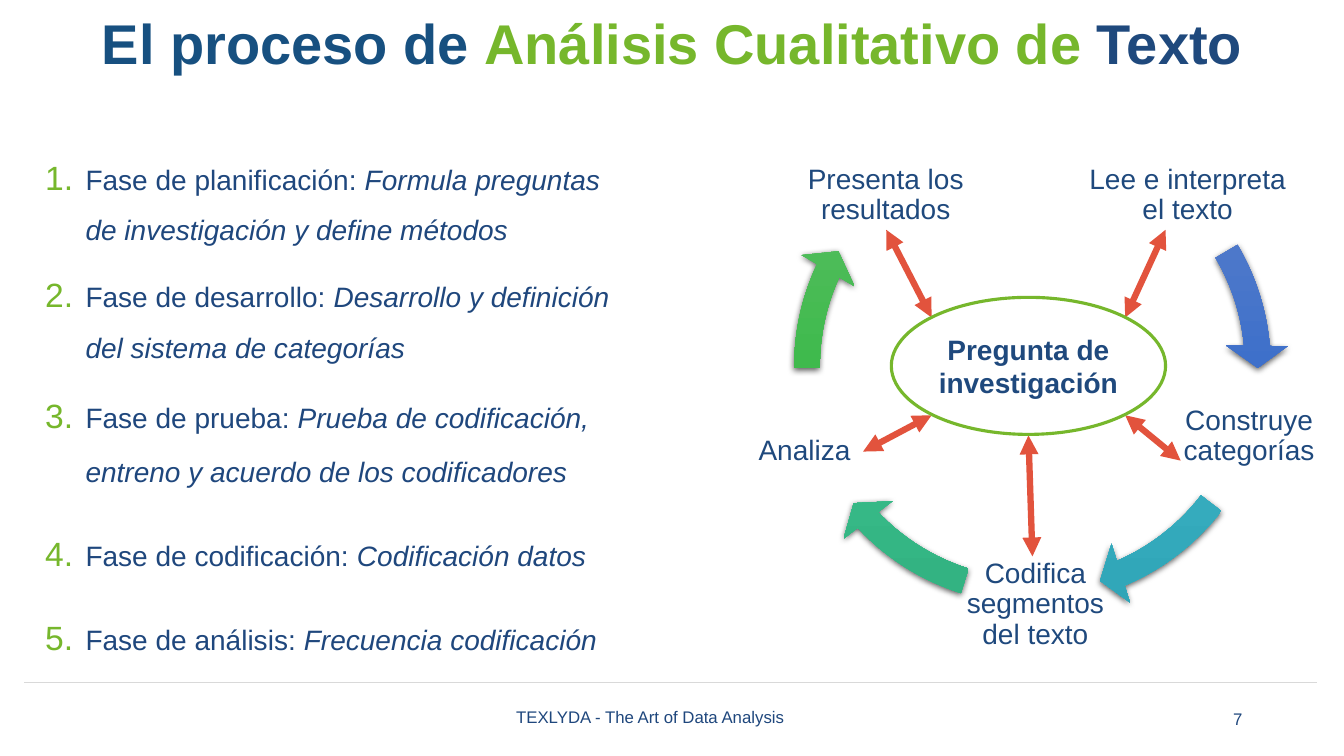
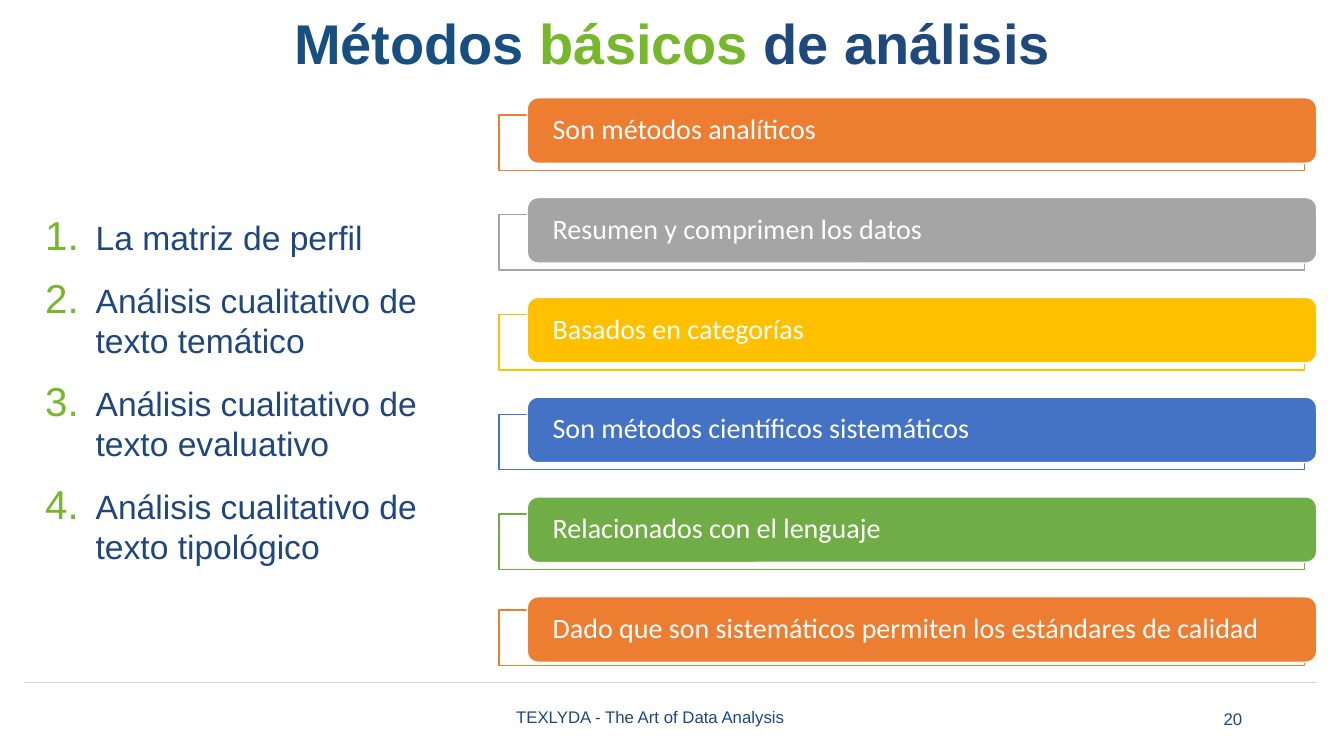
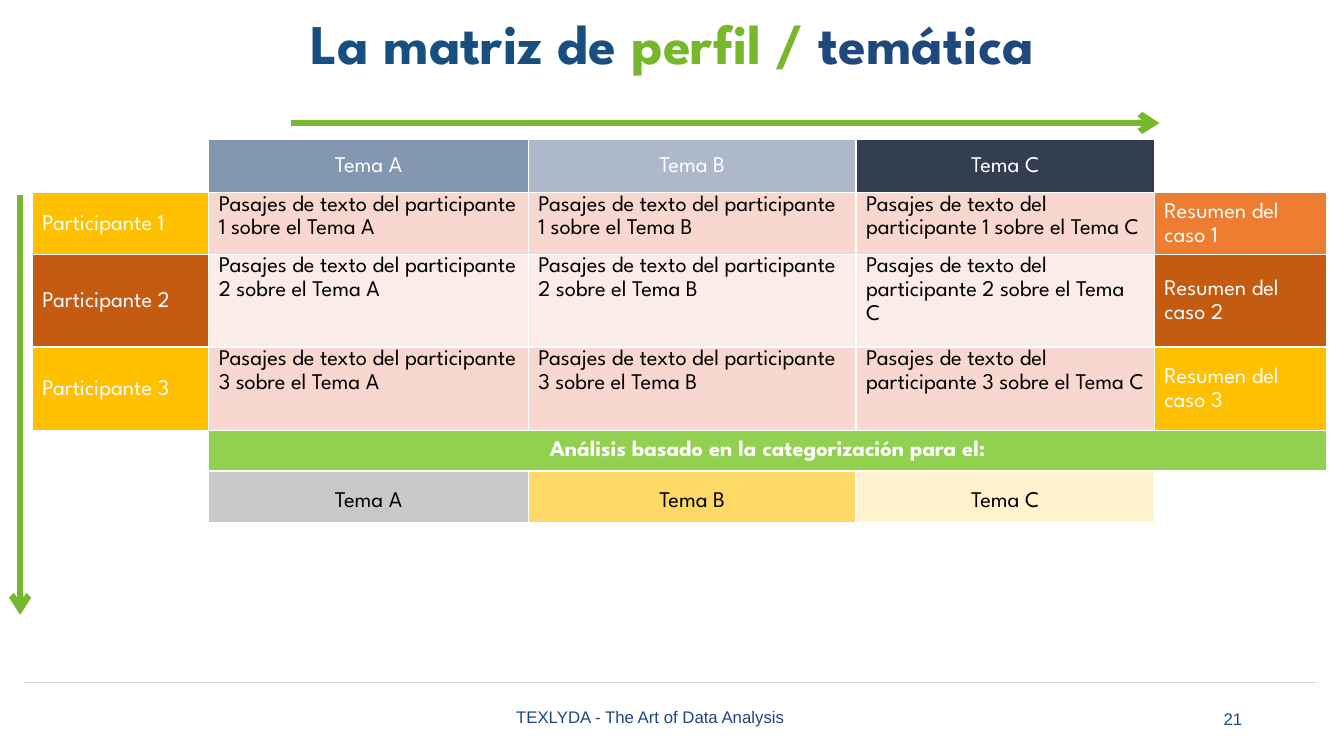
from copy import deepcopy

from pptx import Presentation
from pptx.dml.color import RGBColor
from pptx.enum.shapes import MSO_CONNECTOR, MSO_SHAPE
from pptx.enum.text import MSO_ANCHOR, PP_ALIGN
from pptx.oxml import parse_xml
from pptx.oxml.ns import nsdecls, qn
from pptx.util import Inches, Pt

LEFT, CENTER, RIGHT = PP_ALIGN.LEFT, PP_ALIGN.CENTER, PP_ALIGN.RIGHT
TOP, MIDDLE = MSO_ANCHOR.TOP, MSO_ANCHOR.MIDDLE
STRAIGHT = MSO_CONNECTOR.STRAIGHT
RECT, ROUND = MSO_SHAPE.RECTANGLE, MSO_SHAPE.ROUNDED_RECTANGLE
OVAL, SWEEP = MSO_SHAPE.OVAL, MSO_SHAPE.CIRCULAR_ARROW
ARIAL, SPARTAN, CALIBRI = "Arial", "League Spartan", "Calibri"

COLORS = {
    "white": "FFFFFF", "black": "000000", "rule": "D9D9D9",
    "text": "1F477D", "navy": "1F497D", "teal": "175080",
    "green": "76B72C", "red": "E2533D",
    "orange": "ED7D31", "rust": "C55A11", "gold": "FFC000",
    "gray": "A5A5A5", "blue": "4472C4", "leaf": "70AD47",
    "steel": "8497B0", "mist": "ADB9CA", "slate": "333F50",
    "pink": "F8D7CE", "blush": "FCECE8", "lime": "92D050",
    "silver": "C9C9C9", "sand": "FFD966", "cream": "FFF2CC",
}
RGB = {name: RGBColor.from_string(code) for name, code in COLORS.items()}


def write(frame, runs, size, font=ARIAL, align=LEFT, space=1.0):
    """Add one paragraph of (text, colour, style) runs to a text frame."""
    first = frame.paragraphs[0]
    para = frame.add_paragraph() if first.runs else first
    frame.word_wrap = True
    frame.vertical_anchor = MIDDLE
    para.alignment = align
    para.line_spacing = space
    for text, color, style in runs:
        run = para.add_run()
        run.text = text
        run.font.name = font
        run.font.size = Pt(size)
        run.font.bold = "b" in style
        run.font.italic = "i" in style
        run.font.color.rgb = RGB[color]
    return para


def link(slide, start, end, color, width, head=None, tail=None):
    """Draw a straight line with optional arrowheads."""
    line = slide.shapes.add_connector(STRAIGHT, *map(Inches, start + end))
    line.line.color.rgb = RGB[color]
    line.line.width = Pt(width)
    props = line.element.spPr
    for tag, kind in (("headEnd", head), ("tailEnd", tail)):
        if kind:
            props.find(qn("a:ln")).append(
                parse_xml(f'<a:{tag} {nsdecls("a")} type="{kind}"/>'))
    props.append(parse_xml(f'<a:effectLst {nsdecls("a")}/>'))


deck = Presentation()
deck.slide_width, deck.slide_height = Inches(13.33), Inches(7.5)

# Shared parts: title, rule, footer, page number
heads = [
    (7, ARIAL, "El proceso de ", "Análisis Cualitativo de ", "Texto"),
    (20, ARIAL, "Métodos ", "básicos", " de análisis"),
    (21, SPARTAN, "La matriz de ", "perfil / ", "temática"),
]
slides = []
for page, font, *parts in heads:
    slide = deck.slides.add_slide(deck.slide_layouts[6])
    slides.append(slide)
    link(slide, (0.24, 6.77), (13.06, 6.77), "rule", 0.5)
    title = [(text, color, "b")
             for text, color in zip(parts, ("teal", "green", "navy"))]
    for at, runs, size, face, align, space in (
        ((0, 0, 13.33, 0.93), title, 40, font, CENTER, 0.9),
        ((4.2, 6.91, 4.5, 0.4),
         [("TEXLYDA - The Art of Data Analysis", "text", "")],
         12, ARIAL, CENTER, 1),
        ((9.42, 6.93, 3, 0.4), [(str(page), "text", "")],
         12, ARIAL, RIGHT, 1),
    ):
        box = slide.shapes.add_textbox(*map(Inches, at))
        write(box.text_frame, runs, size, face, align, space)
cycle, basics, matrix = slides

# Numbered lists: runs and line spacing of each item
phases = [
    ("planificación", "Formula preguntas de investigación y define métodos", 1.5),
    ("desarrollo", "Desarrollo y definición del sistema de categorías", 1.5),
    ("prueba",
     "Prueba de codificación, entreno y acuerdo de los codificadores", 1.6),
    ("codificación", "Codificación datos", 2.0),
    ("análisis", "Frecuencia codificación", 2.0),
]
steps = [([(f"Fase de {name}: ", "text", ""), (task, "text", "i")], space)
         for name, task, space in phases]
kinds = [([(text, "text", "")], 1.0) for text in (
    "La matriz de perfil",
    "Análisis cualitativo de texto temático",
    "Análisis cualitativo de texto evaluativo",
    "Análisis cualitativo de texto tipológico",
)]
for slide, at, items, size, indent, before in (
    (cycle, (0.35, 1.19, 5.9, 5.57), steps, 20, 0.4, 6),
    (basics, (0.35, 1.21, 4.38, 5.35), kinds, 24, 0.5, 10),
):
    frame = slide.shapes.add_textbox(*map(Inches, at)).text_frame
    for i, (runs, space) in enumerate(items):
        para = write(frame, runs, size, space=space)
        para.space_before = Pt(before if i else 0)
        para.space_after = Pt(6)
        props = para._p.get_or_add_pPr()
        props.set("marL", str(Inches(indent)))
        props.set("indent", str(-Inches(indent)))
        for mark in (
            f'<a:buClr {nsdecls("a")}><a:srgbClr val="{COLORS["green"]}"/></a:buClr>',
            f'<a:buSzPct {nsdecls("a")} val="120000"/>',
            f'<a:buFont {nsdecls("a")} typeface="{ARIAL}"/>',
            f'<a:buAutoNum {nsdecls("a")} type="arabicPeriod"/>',
        ):
            props.append(parse_xml(mark))

# Cycle: curved arrows with gradient and shadow
sweeps = [
    (212.94, 197.66, ("6183CB", "3E70CA", "3062BB")),
    (40.16, 22.53, ("60B8C7", "3DB4C6", "2FA5B7")),
    (82.12, 64.49, ("60C39A", "3DC18E", "31B180")),
    (122.99, 107.7, ("60BE68", "3FBA4D", "33AA40")),
]
for end, start, shades in sweeps:
    arrow = cycle.shapes.add_shape(
        SWEEP, *map(Inches, (7.7, 1.09, 5.08, 5.08)))
    for i, value in enumerate((0.05, 3.36, end, start, 0.06)):
        arrow.adjustments[i] = value
    arrow.line.fill.background()
    arrow.fill.gradient()
    arrow.fill.gradient_angle = 270
    props = arrow.element.spPr
    stops = props.find(".//" + qn("a:gsLst"))
    stops.insert(1, deepcopy(stops[0]))
    for stop, place, shade in zip(arrow.fill.gradient_stops, (0, 0.5, 1), shades):
        stop.position = place
        stop.color.rgb = RGBColor.from_string(shade)
    arrow.shadow.inherit = False
    props.find(qn("a:effectLst")).append(parse_xml(
        f'<a:outerShdw {nsdecls("a")} blurRad="{Pt(4.5)}" dist="{Pt(1.5)}" '
        'dir="5400000" algn="ctr" rotWithShape="0">'
        f'<a:srgbClr val="{COLORS["black"]}"><a:alpha val="63000"/></a:srgbClr>'
        '</a:outerShdw>'))

# Cycle: labels and their links to the centre
labels = [
    ("Lee e interpreta el texto", (10.68, 1.38, 2.2, 1.11),
     (11.56, 2.28), (11.16, 3.15)),
    ("Construye categorías", (11.66, 3.65, 1.46, 1.36),
     (11.71, 4.57), (11.16, 4.12)),
    ("Codifica segmentos del texto", (9.49, 5.32, 1.56, 1.36),
     (10.24, 5.52), (10.2, 4.32)),
    ("Analiza", (7.3, 3.8, 1.36, 1.36), (8.56, 4.48), (9.24, 4.12)),
    ("Presenta los resultados", (7.93, 1.38, 1.71, 1.11),
     (8.79, 2.28), (9.24, 3.15)),
]
for text, at, start, end in labels:
    frame = cycle.shapes.add_textbox(*map(Inches, at)).text_frame
    frame.margin_left = frame.margin_right = Inches(0.03)
    frame.margin_top = frame.margin_bottom = Inches(0.03)
    write(frame, [(text, "navy", "")], 20, align=CENTER, space=0.9)
    link(cycle, start, end, "red", 4.5, "triangle", "triangle")

core = cycle.shapes.add_shape(OVAL, *map(Inches, (8.84, 2.95, 2.72, 1.36)))
core.shadow.inherit = False
core.fill.solid()
core.fill.fore_color.rgb = RGB["white"]
core.line.color.rgb = RGB["green"]
core.line.width = Pt(2.25)
frame = core.text_frame
frame.margin_left = frame.margin_right = Inches(0.04)
frame.margin_top = frame.margin_bottom = Inches(0.04)
write(frame, [("Pregunta de investigación", "navy", "b")], 20, align=CENTER)

# Methods: a banner over an outlined frame, one per trait
traits = [
    ("Son métodos analíticos", "orange", 0.17),
    ("Resumen y comprimen los datos", "gray", 0.17),
    ("Basados en categorías", "gold", 0.17),
    ("Son métodos científicos sistemáticos", "blue", 0.17),
    ("Relacionados con el lenguaje", "leaf", 0.17),
    ("Dado que son sistemáticos permiten los estándares de calidad",
     "orange", 0.13),
]
for i, (text, color, drop) in enumerate(traits):
    top = 0.97 + 0.99 * i
    for shape, at, fill, edge in (
        (RECT, (4.95, top + drop, 7.99, 0.55), "white", color),
        (ROUND, (5.23, top, 7.83, 0.65), color, "white"),
    ):
        bar = basics.shapes.add_shape(shape, *map(Inches, at))
        bar.shadow.inherit = False
        bar.fill.solid()
        bar.fill.fore_color.rgb = RGB[fill]
        bar.line.color.rgb = RGB[edge]
        bar.line.width = Pt(1)
    frame = bar.text_frame
    frame.margin_left = frame.margin_right = Inches(0.22)
    frame.margin_top = frame.margin_bottom = 0
    write(frame, [(text, "white", "")], 20, CALIBRI, space=0.9)

# Matrix: rows of (text, fill) cells
blank = ("", "white")
themes = ["Tema A", "Tema B", "Tema C"]
rows = [[blank, *zip(themes, ("steel", "mist", "slate")), blank]]
for n, (side, body, end) in enumerate((
    ("gold", "pink", "orange"),
    ("rust", "blush", "rust"),
    ("gold", "pink", "gold"),
), 1):
    cells = [(f"Pasajes de texto del participante {n} sobre el {theme}", body)
             for theme in themes]
    rows.append([(f"Participante {n}", side), *cells,
                 (f"Resumen del caso {n}", end)])
rows.append([blank, ("Análisis basado en la categorización para el:", "lime"),
             *[("", "lime")] * 3])
rows.append([blank, *zip(themes, ("silver", "sand", "cream")), blank])

widths = [1.75, 3.17, 3.25, 2.96, 1.71]
heights = [0.53, 0.61, 0.71, 0.83, 0.38, 0.51]
table = matrix.shapes.add_table(
    6, 5, *map(Inches, (0.32, 1.38, sum(widths), sum(heights)))).table
table.first_row = table.horz_banding = False
for column, width in zip(table.columns, widths):
    column.width = Inches(width)
for r, height in enumerate(heights):
    table.rows[r].height = Inches(height)
    for c, (text, fill) in enumerate(rows[r]):
        cell = table.cell(r, c)
        body = r in (1, 2, 3) and c in (1, 2, 3)
        cell.margin_left = cell.margin_right = Inches(0.1)
        cell.margin_top = cell.margin_bottom = 0
        cell.vertical_anchor = TOP if body or r == 4 else MIDDLE
        for edge in "LRTB":
            cell._tc.get_or_add_tcPr().append(parse_xml(
                f'<a:ln{edge} {nsdecls("a")} w="{Pt(1)}"><a:solidFill>'
                f'<a:srgbClr val="{COLORS["white"]}"/></a:solidFill></a:ln{edge}>'))
        cell.fill.solid()
        cell.fill.fore_color.rgb = RGB[fill]
        if text:
            color = "black" if body or r == 5 else "white"
            write(cell.text_frame, [(text, color, "b" if r == 4 else "")],
                  16, SPARTAN, CENTER if r in (0, 4, 5) else LEFT,
                  1.5 if r > 3 else 1.15)
table.cell(4, 1).merge(table.cell(4, 4))

# Matrix: reading directions
for start, end in (((2.89, 1.22), (11.5, 1.22)), ((0.2, 1.93), (0.2, 6.1))):
    link(matrix, start, end, "green", 4.5, tail="arrow")

deck.save("out.pptx")
